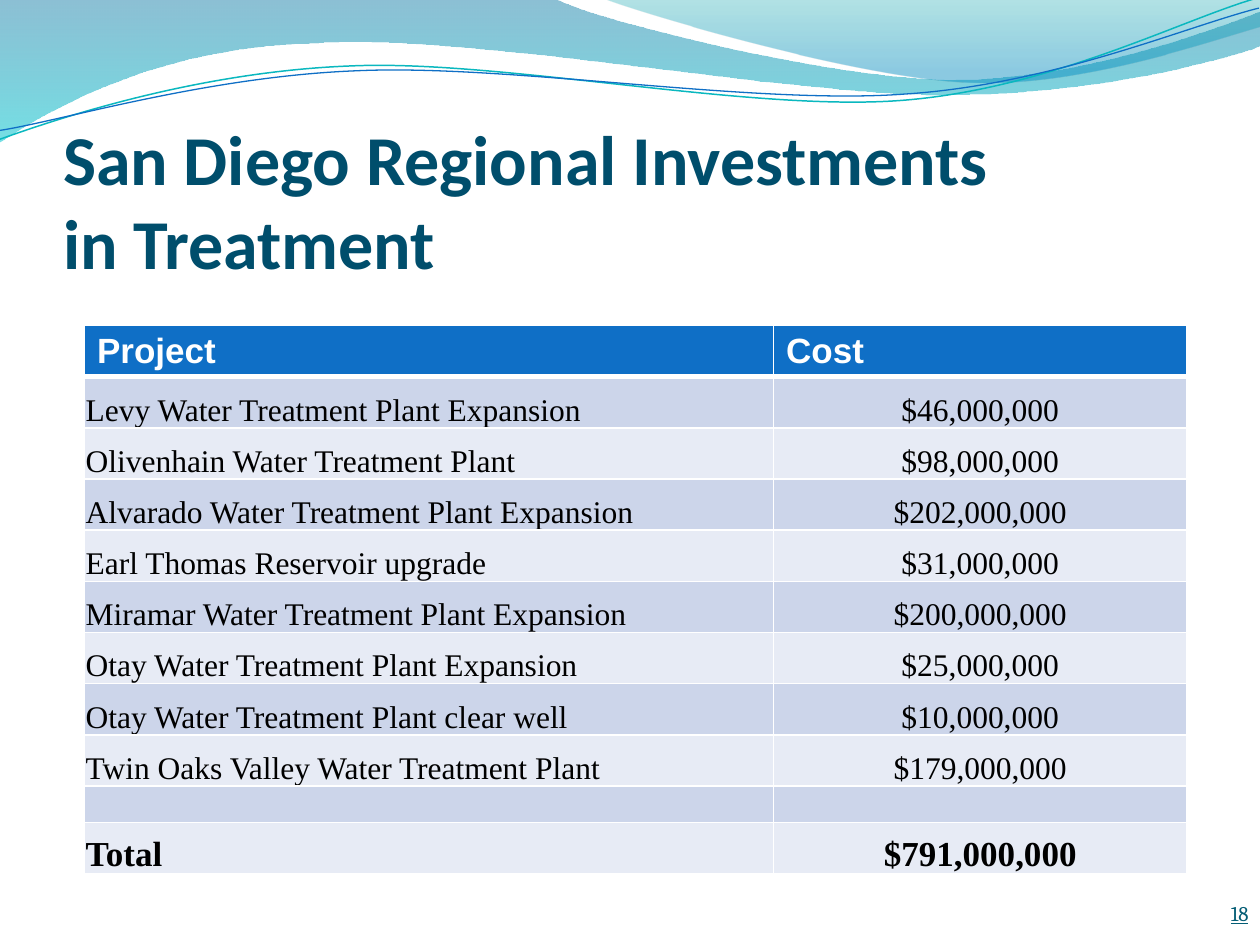
"""Build the slide on San Diego regional investments in treatment."""
from lxml import etree
from pptx import Presentation
from pptx.dml.color import RGBColor
from pptx.enum.text import MSO_ANCHOR, MSO_AUTO_SIZE, PP_ALIGN
from pptx.oxml.ns import qn
from pptx.util import Inches, Pt

LEFT, CENTER, RIGHT = PP_ALIGN.LEFT, PP_ALIGN.CENTER, PP_ALIGN.RIGHT
BOTTOM = MSO_ANCHOR.BOTTOM
FIXED = MSO_AUTO_SIZE.NONE
paint = RGBColor.from_string


def trace(shapes, start, parts, close):
    """Draw a freeform from line ends (2 numbers) and Bezier parts (6 numbers)."""
    points = [(Inches(x), Inches(y)) for part in parts
              for x, y in zip(part[::2], part[1::2])]
    pen = shapes.build_freeform(Inches(start[0]), Inches(start[1]))
    pen.add_line_segments(points, close=close)
    shape = pen.convert_to_shape()
    shape.shadow.inherit = False
    lines = shape.element.spPr.iter(qn("a:lnTo"))
    lines = iter(list(lines))
    for part in parts:
        group = [next(lines) for _ in part[::2]]
        if len(group) == 3:
            bend = etree.Element(qn("a:cubicBezTo"))
            group[0].addprevious(bend)
            for line in group:
                bend.append(line[0])
                line.getparent().remove(line)
    return shape


def write(par, text, size, face, hue, bold=False):
    """Add one formatted run to a paragraph."""
    run = par.add_run()
    run.text = text
    font = run.font
    font.size, font.name, font.bold = Pt(size), face, bold
    font.color.rgb = paint(hue)
    return run


deck = Presentation()
deck.slide_width, deck.slide_height = Inches(10), Inches(7.5)
slide = deck.slides.add_slide(deck.slide_layouts[5])
shapes = slide.shapes

waves = [
    ((0, 0), [(4.4, -0.01), (4.76, 0.17, 6.64, 0.63, 7.58, 0.63),
              (8.53, 0.63, 9.58, 0.26, 10, 0.09), (10.01, 0.36),
              (9.83, 0.44, 8.7, 0.76, 7.46, 0.75),
              (6.22, 0.75, 3.82, 0.28, 2.57, 0.34),
              (1.29, 0.36, 0.46, 0.83, -0.01, 1.13)],
     [(0, "0074A1", 45), (1, "00C6CF", 55)]),
    ((4.79, -0.01), [(5.09, 0.11, 6.82, 0.62, 7.69, 0.65),
                     (8.56, 0.69, 9.61, 0.32, 10, 0.21), (10, 0)],
     [(0, "00A1A9", 30), (0.8, "008BBF", 45)]),
]
for start, parts, stops in waves:
    wave = trace(shapes, start, parts, True)
    wave.line.fill.background()
    wave.fill.gradient()
    wave.fill.gradient_angle = 270
    for stop, (place, hue, _) in zip(wave.fill.gradient_stops, stops):
        stop.position = place
        stop.color.rgb = paint(hue)
    tints = wave.element.spPr.iter(qn("a:srgbClr"))
    for tint, (_, _, alpha) in zip(tints, stops):
        etree.SubElement(tint, qn("a:alpha")).set("val", str(alpha * 1000))

curves = [
    ((-0.02, 0.87), [(0.47, 0.72, 1.58, 0.41, 2.78, 0.42),
                     (3.96, 0.42, 5.91, 0.93, 7.12, 0.9),
                     (8.32, 0.87, 9.4, 0.36, 10, 0.22)], "0AB8BF", 0.85),
    ((-0.02, 0.8), [(0.46, 0.75, 1.64, 0.45, 2.83, 0.46),
                    (4.03, 0.46, 5.96, 0.88, 7.16, 0.85),
                    (8.35, 0.83, 9.42, 0.42, 10.01, 0.3)], "0F6FC6", 0.75),
]
pair = shapes.add_group_shape()
for start, parts, hue, width in curves:
    curve = trace(pair.shapes, start, parts, False)
    curve.rotation = 357.3
    curve.fill.background()
    curve.line.color.rgb = paint(hue)
    curve.line.width = Pt(width)

title = shapes.title
shapes.element.append(title.element)
title.left, title.top = Inches(0.5), Inches(1.5)
title.width, title.height = Inches(8.5), Inches(0.75)
frame = title.text_frame
frame.word_wrap, frame.auto_size = True, FIXED
frame.vertical_anchor = BOTTOM
frame.margin_left = frame.margin_right = frame.margin_bottom = 0
frame.margin_top = Inches(0.05)
par = frame.paragraphs[0]
par.alignment = LEFT
write(par, "San Diego Regional Investments", 40, "Calibri", "004E6C", True)
par.add_line_break()
write(par, "in Treatment", 40, "Calibri", "004E6C", True)

rows = [
    ("Project", "Cost"),
    ("Levy Water Treatment Plant Expansion", "$46,000,000"),
    ("Olivenhain Water Treatment Plant", "$98,000,000"),
    ("Alvarado Water Treatment Plant Expansion", "$202,000,000"),
    ("Earl Thomas Reservoir upgrade", "$31,000,000"),
    ("Miramar Water Treatment Plant Expansion", "$200,000,000"),
    ("Otay Water Treatment Plant Expansion", "$25,000,000"),
    ("Otay Water Treatment Plant clear well", "$10,000,000"),
    ("Twin Oaks Valley Water Treatment Plant", "$179,000,000"),
    ("", ""),
    ("Total", "$791,000,000"),
]
last = len(rows) - 1
tall = Inches(4.06) // last
table = shapes.add_table(len(rows), 2, Inches(0.67), Inches(2.58),
                         Inches(8.75), Inches(4.34)).table
table.columns[0].width, table.columns[1].width = Inches(5.47), Inches(3.28)
for i, row in enumerate(rows):
    table.rows[i].height = tall if row[0] else Inches(0.28)
    for j, text in enumerate(row):
        cell = table.cell(i, j)
        props = cell._tc.get_or_add_tcPr()
        for side in "LRTB":
            thick = (i, side) in ((0, "B"), (1, "T"))
            edge = etree.SubElement(props, qn("a:ln" + side))
            edge.set("w", str(Pt(3 if thick else 1)))
            solid = etree.SubElement(edge, qn("a:solidFill"))
            etree.SubElement(solid, qn("a:srgbClr")).set("val", "FFFFFF")
        cell.fill.solid()
        par = cell.text_frame.paragraphs[0]
        if i == 0:
            cell.fill.fore_color.rgb = paint("0F6FC6")
            write(par, text, 20, "Arial", "FFFFFF", True)
            continue
        cell.fill.fore_color.rgb = paint("CCD5EA" if i % 2 else "E7EBF5")
        cell.vertical_anchor = BOTTOM
        cell.margin_left = cell.margin_right = cell.margin_top = Inches(0.01)
        cell.margin_bottom = 0
        par.alignment = CENTER if j else LEFT
        write(par, text, 20 if i == last else 18, "Times New Roman", "000000",
              i == last)

box = shapes.add_textbox(Inches(7.58), Inches(6.83), Inches(2.33), Inches(0.52))
frame = box.text_frame
frame.word_wrap = True
frame.vertical_anchor = BOTTOM
frame.margin_left = frame.margin_right = 0
frame.margin_top = frame.margin_bottom = 0
par = frame.paragraphs[0]
par.alignment = RIGHT
write(par, "18", 12, "Cambria", "045D75").font.underline = True

deck.save("out.pptx")
